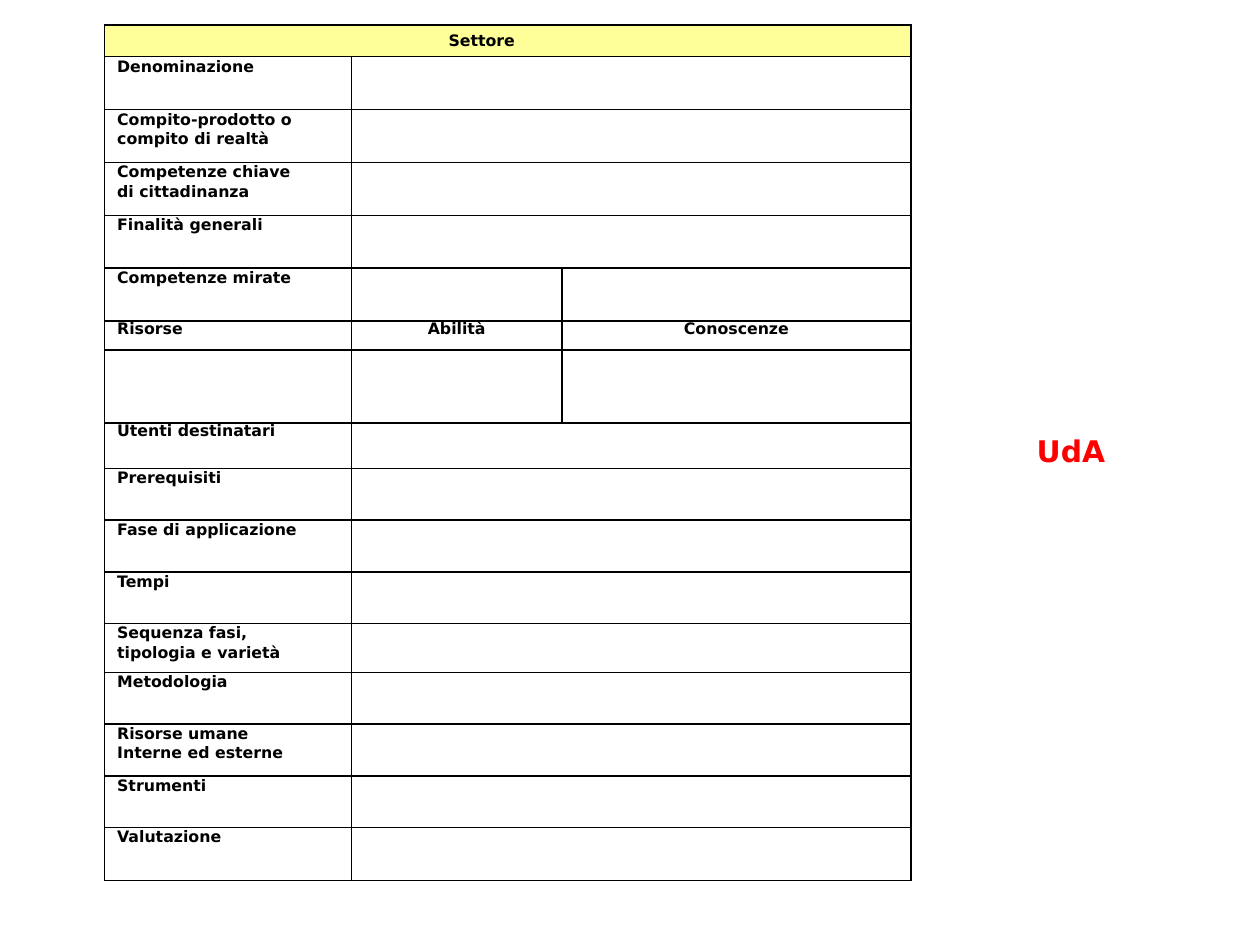
from dataclasses import dataclass
from typing import Optional

from lxml import etree
from pptx import Presentation
from pptx import util as u
from pptx.dml.color import RGBColor
from pptx.enum import text
from pptx.oxml.ns import qn

BLACK = RGBColor(0x00, 0x00, 0x00)
RED = RGBColor(0xFF, 0x00, 0x00)
YELLOW = RGBColor(0xFF, 0xFF, 0x99)
FONT = "DejaVu Sans"
BORDER = u.Pt(0.95)
COLUMNS = (1.96, 1.67, 2.44)
LABEL_INDENT = 0.1
HEADER_INDENT = 2.73


@dataclass(frozen=True)
class Row:
    height: float
    texts: tuple[str, ...] = ()
    before: float = 0
    after: float = 0
    leading: float = 11
    cells: int = 2  # separate cells left after merging


ROWS = (
    Row(0.25, ("Settore",), 3.8, 3.4, cells=1),
    Row(0.42, ("Denominazione",), 3.3, 15.8),
    Row(0.42, ("Compito-prodotto o compito di realtà",), 3.6, 5.2),
    Row(0.42, ("Competenze chiave\vdi cittadinanza",), 3.4, 4.7),
    Row(0.42, ("Finalità generali",), 3.3, 15.3),
    Row(0.42, ("Competenze mirate",), 3.4, 15.6, cells=3),
    Row(0.23, ("Risorse", "Abilità", "Conoscenze"), 0, 6.1, 10, cells=3),
    Row(0.58, cells=3),
    Row(0.36, ("Utenti destinatari",), 0, 15.2, 10),
    Row(0.41, ("Prerequisiti",), 3.1, 15.1),
    Row(0.41, ("Fase di applicazione",), 3.2, 15.1),
    Row(0.41, ("Tempi",), 3.1, 15.1),
    Row(0.39, ("Sequenza fasi,\vtipologia e varietà",), 3.4, 3),
    Row(0.41, ("Metodologia",), 3.3, 14.8),
    Row(0.41, ("Risorse umane\vInterne ed esterne",), 3, 3.9),
    Row(0.41, ("Strumenti",), 3.5, 14.7),
    Row(0.42, ("Valutazione",), 3.5, 15.4),
)


def apply(target, values: dict) -> None:
    for name, value in values.items():
        setattr(target, name, value)


def write(p, words: str, size: float, color: RGBColor, layout: dict) -> None:
    p.text = words
    apply(p, layout)
    for r in p.runs:
        apply(r.font, {"name": FONT, "size": u.Pt(size), "bold": True})
        r.font.color.rgb = color


def add_borders(cell) -> None:
    tc_pr = cell._tc.get_or_add_tcPr()
    for side in ("lnL", "lnR", "lnT", "lnB"):
        ln = etree.SubElement(tc_pr, qn(f"a:{side}"), w=str(BORDER))
        fill = etree.SubElement(ln, qn("a:solidFill"))
        etree.SubElement(fill, qn("a:srgbClr"), val=str(BLACK))


def format_cell(cell, fill: Optional[RGBColor], indent: float) -> None:
    apply(cell, {"margin_left": u.Inches(indent), "margin_right": 0,
                 "margin_top": 0, "margin_bottom": 0})
    add_borders(cell)
    if fill is None:
        cell.fill.background()
    else:
        cell.fill.solid()
        cell.fill.fore_color.rgb = fill


def fill_row(table, index: int, row: Row) -> None:
    table.rows[index].height = u.Inches(row.height)
    is_header = row.cells == 1
    label_indent = HEADER_INDENT if is_header else LABEL_INDENT
    for col in range(len(COLUMNS)):
        cell = table.cell(index, col)
        format_cell(cell, YELLOW if is_header else None,
                    label_indent if col == 0 else 0)
        if col < len(row.texts):
            write(cell.text_frame.paragraphs[0], row.texts[col], 9, BLACK, {
                "alignment": text.PP_ALIGN.CENTER if col else text.PP_ALIGN.LEFT,
                "line_spacing": u.Pt(row.leading),
                "space_before": u.Pt(row.before),
                "space_after": u.Pt(row.after),
            })
    first = table.cell(index, row.cells - 1)
    if is_header:
        first.vertical_anchor = text.MSO_ANCHOR.MIDDLE
    if row.cells < len(COLUMNS):
        first.merge(table.cell(index, len(COLUMNS) - 1))


def add_form(slide) -> None:
    height = sum(row.height for row in ROWS)
    frame = slide.shapes.add_table(
        len(ROWS), len(COLUMNS), u.Inches(0.83), u.Inches(0.2),
        u.Inches(sum(COLUMNS)), u.Inches(height))
    table = frame.table
    apply(table, {"first_row": False, "horz_banding": False})
    for column, width in zip(table.columns, COLUMNS):
        column.width = u.Inches(width)
    for index, row in enumerate(ROWS):
        fill_row(table, index, row)


def format_title(title) -> None:
    apply(title, {"left": u.Inches(7.45), "top": u.Inches(3.12),
                  "width": u.Inches(2.1), "height": u.Inches(0.9)})
    tf = title.text_frame
    apply(tf, {"margin_left": 0, "margin_right": 0, "margin_bottom": 0,
               "margin_top": u.Pt(22), "word_wrap": True,
               "auto_size": text.MSO_AUTO_SIZE.NONE,
               "vertical_anchor": text.MSO_ANCHOR.TOP})
    write(tf.paragraphs[0], "UdA", 17, RED, {
        "alignment": text.PP_ALIGN.CENTER, "line_spacing": u.Pt(21),
        "space_before": u.Pt(0)})


def main() -> None:
    prs = Presentation()
    apply(prs, {"slide_width": u.Inches(10), "slide_height": u.Inches(7.5)})
    s = prs.slides.add_slide(prs.slide_layouts[5])
    add_form(s)
    format_title(s.shapes.title)
    prs.save("out.pptx")


if __name__ == "__main__":
    main()
